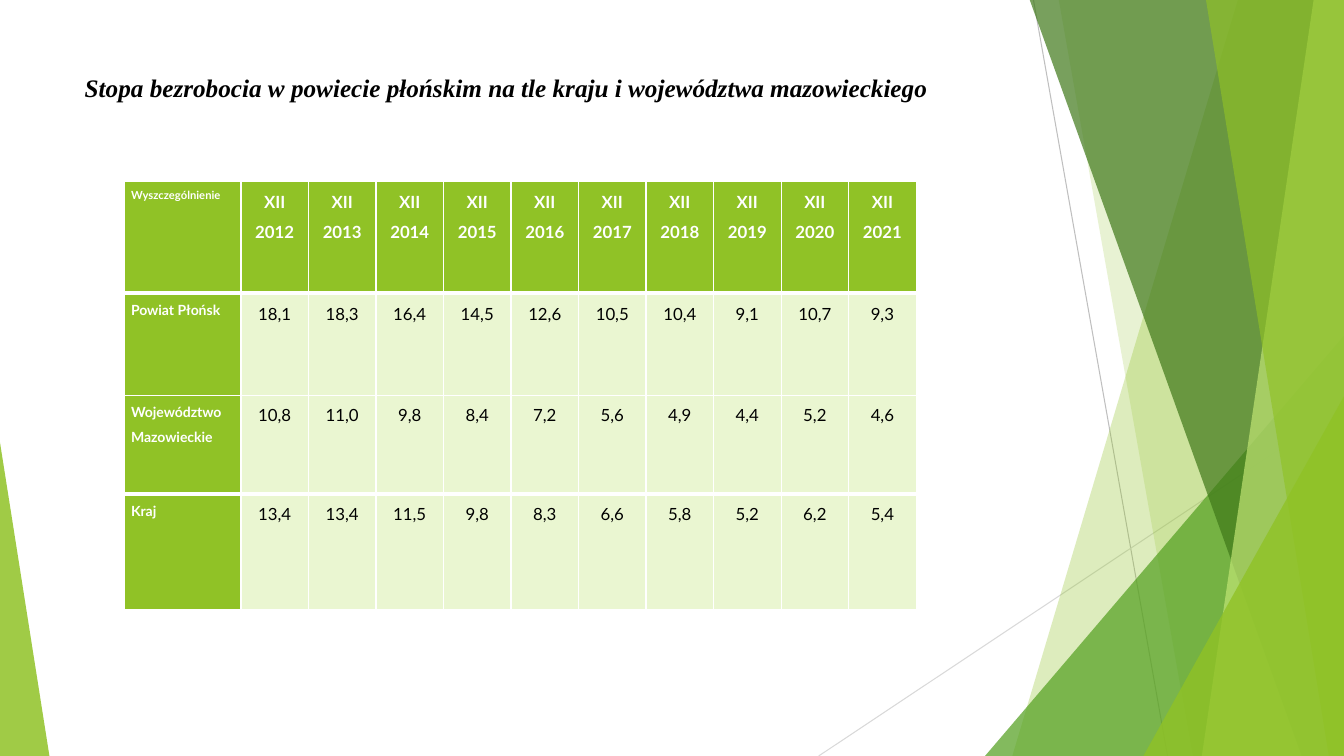
"""Build the slide on unemployment rates in Płońsk county, Mazovia and Poland."""
from dataclasses import dataclass

from lxml import etree
from pptx import Presentation
from pptx import util as u
from pptx.dml.color import RGBColor
from pptx.enum import shapes, text
from pptx.oxml.ns import qn

GREEN = RGBColor(0x90, 0xC2, 0x26)
MID_GREEN = RGBColor(0x54, 0xA0, 0x21)
DARK_GREEN = RGBColor(0x3F, 0x78, 0x19)
LIGHT_GREEN = RGBColor(0xC0, 0xE4, 0x74)
PALE_GREEN = RGBColor(0xEA, 0xF6, 0xD1)
GREY = RGBColor(0xBF, 0xBF, 0xBF)
LIGHT_GREY = RGBColor(0xD9, 0xD9, 0xD9)
WHITE = RGBColor(0xFF, 0xFF, 0xFF)
BLACK = RGBColor(0, 0, 0)

WIDTH, HEIGHT, TOP = 13.33, 7.5, -0.01
THIN, THICK = 1, 3


@dataclass
class Ray:
    start: tuple[float, float]
    end: tuple[float, float]
    color: RGBColor


@dataclass
class Band:
    """A panel reaching the right edge, with a slanted left side."""
    top_x: float
    bottom_x: float
    color: RGBColor
    opacity: int


@dataclass
class Corner:
    """A right triangle standing on the bottom edge."""
    left: float
    top: float
    width: float
    apex: float
    color: RGBColor
    opacity: int


@dataclass
class Row:
    label: str
    label_size: int
    values: list[str]
    height: float
    value_fill: RGBColor = PALE_GREEN
    value_color: RGBColor = BLACK
    bold: bool = False
    top_border: int = THIN
    bottom_border: int = THIN


RAYS = [
    Ray((10.25, 0), (11.58, HEIGHT), GREY),
    Ray((WIDTH, 4.03), (8.12, HEIGHT), LIGHT_GREY),
]
FACETS = [
    Band(12.28, 10.04, GREEN, 30),
    Band(10.5, 11.83, GREEN, 20),
    Corner(9.77, 3.33, 3.56, 1, MID_GREEN, 72),
    Band(10.21, 12.91, DARK_GREEN, 70),
    Band(13.03, 11.92, LIGHT_GREEN, 70),
    Band(11.96, 13.18, GREEN, 65),
    Corner(11.34, 3.93, 1.99, 1, GREEN, 80),
    Corner(0, 4.39, 0.49, 0, GREEN, 85),
]
ROWS = [
    Row("Wyszczególnienie", 8, [f"XII\n{year}" for year in range(2012, 2022)],
        1.11, GREEN, WHITE, True, bottom_border=THICK),
    Row("Powiat Płońsk", 10, "18,1 18,3 16,4 14,5 12,6 10,5 10,4 9,1 10,7 9,3".split(),
        1.01, top_border=THICK),
    Row("Województwo Mazowieckie", 10, "10,8 11,0 9,8 8,4 7,2 5,6 4,9 4,4 5,2 4,6".split(),
        0.98, bottom_border=THICK),
    Row("Kraj", 10, "13,4 13,4 11,5 9,8 8,3 6,6 5,8 5,2 6,2 5,4".split(),
        1.15, top_border=THICK),
]


def add_ray(s, ray: Ray) -> None:
    line = s.shapes.add_connector(shapes.MSO_CONNECTOR.STRAIGHT,
                                  *map(u.Inches, ray.start + ray.end))
    line.line.color.rgb = ray.color
    line.line.width = u.Pt(0.75)
    etree.SubElement(line.element.spPr, qn("a:effectLst"))


def add_facet(s, facet: Band | Corner) -> None:
    if isinstance(facet, Band):
        points = [(WIDTH, TOP), (WIDTH, HEIGHT), (facet.bottom_x, HEIGHT)]
        outline = s.shapes.build_freeform(u.Inches(facet.top_x), u.Inches(TOP))
        outline.add_line_segments([(u.Inches(x), u.Inches(y)) for x, y in points])
        sp = outline.convert_to_shape()
    else:
        box = (facet.left, facet.top, facet.width, HEIGHT - facet.top)
        sp = s.shapes.add_shape(shapes.MSO_SHAPE.ISOSCELES_TRIANGLE, *map(u.Inches, box))
        sp.adjustments[0] = facet.apex
    sp.shadow.inherit = False
    sp.line.fill.background()
    sp.fill.solid()
    sp.fill.fore_color.rgb = facet.color
    color = sp.element.spPr.find(qn("a:solidFill"))[0]
    etree.SubElement(color, qn("a:alpha"), val=str(facet.opacity * 1000))


def add_title(s, wording: str) -> None:
    title = s.shapes.title
    title.left, title.top, title.width, title.height = map(u.Inches, (0.74, 0.67, 9.4, 0.55))
    tf = title.text_frame
    tf.text = wording
    tf.word_wrap = True
    tf.auto_size = text.MSO_AUTO_SIZE.NONE
    tf.vertical_anchor = text.MSO_ANCHOR.TOP
    p = tf.paragraphs[0]
    p.alignment = text.PP_ALIGN.LEFT
    p.font.name, p.font.size = "Times New Roman", u.Pt(18)
    p.font.bold = p.font.italic = True
    p.font.color.rgb = BLACK


def set_borders(cell, top: int, bottom: int) -> None:
    tc_pr = cell._tc.get_or_add_tcPr()
    for side, width in (("L", THIN), ("R", THIN), ("T", top), ("B", bottom)):
        ln = etree.SubElement(tc_pr, qn(f"a:ln{side}"), w=str(u.Pt(width)))
        solid = etree.SubElement(ln, qn("a:solidFill"))
        etree.SubElement(solid, qn("a:srgbClr"), val=str(WHITE))


def fill_cell(cell, row: Row, wording: str, is_label: bool) -> None:
    set_borders(cell, row.top_border, row.bottom_border)
    cell.fill.solid()
    cell.fill.fore_color.rgb = GREEN if is_label else row.value_fill
    cell.margin_left = cell.margin_right = u.Inches(0.07)
    cell.margin_top = cell.margin_bottom = 0
    cell.text = wording
    for p in cell.text_frame.paragraphs:
        p.alignment = text.PP_ALIGN.JUSTIFY if is_label else text.PP_ALIGN.CENTER
        p.line_spacing = 1.5
        p.font.name = "Lato"
        p.font.size = u.Pt(row.label_size if is_label else 12)
        p.font.bold = is_label or row.bold
        p.font.color.rgb = WHITE if is_label else row.value_color


def add_rates(s, rows: list[Row]) -> None:
    widths = [1.16] + [0.67] * len(rows[0].values)
    box = (1.23, 1.8, sum(widths), sum(row.height for row in rows))
    table = s.shapes.add_table(len(rows), len(widths), *map(u.Inches, box)).table
    table.first_row = table.horz_banding = False
    for column, width in zip(table.columns, widths):
        column.width = u.Inches(width)
    for r, row in enumerate(rows):
        table.rows[r].height = u.Inches(row.height)
        for c, wording in enumerate([row.label, *row.values]):
            fill_cell(table.cell(r, c), row, wording, c == 0)


def main() -> None:
    prs = Presentation()
    prs.slide_width, prs.slide_height = u.Inches(WIDTH), u.Inches(HEIGHT)
    s = prs.slides.add_slide(prs.slide_layouts[5])
    for ray in RAYS:
        add_ray(s, ray)
    for facet in FACETS:
        add_facet(s, facet)
    add_title(s, "Stopa bezrobocia w powiecie płońskim na tle kraju i województwa mazowieckiego")
    add_rates(s, ROWS)
    prs.save("out.pptx")


if __name__ == "__main__":
    main()
